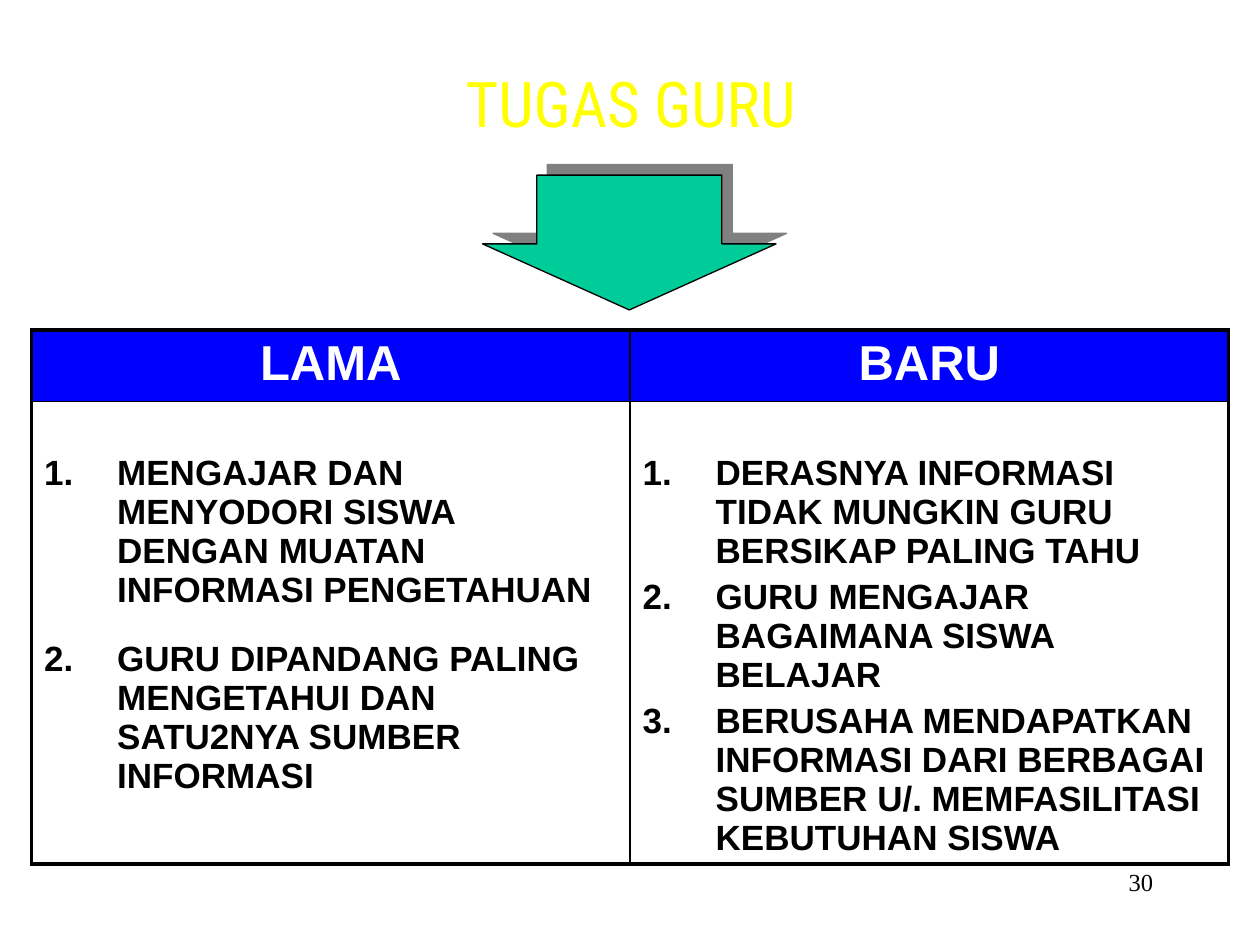
from dataclasses import dataclass

from lxml.etree import SubElement
from pptx import Presentation
from pptx.dml.color import RGBColor
from pptx.enum.shapes import MSO_SHAPE
from pptx.enum.text import MSO_ANCHOR, PP_ALIGN
from pptx.oxml.ns import qn
from pptx.util import Inches, Pt

BLACK = "000000"
THIN, THICK = 1, 2.25


@dataclass
class Column:
    head: str
    items: list[str]
    gap: float
    right: float
    bottom: float


COLUMNS = [
    Column("LAMA", [
        "MENGAJAR DAN MENYODORI SISWA DENGAN MUATAN INFORMASI PENGETAHUAN",
        "GURU DIPANDANG PALING MENGETAHUI DAN SATU2NYA SUMBER INFORMASI",
    ], 17, 0.2, 0.54),
    Column("BARU", [
        "DERASNYA INFORMASI TIDAK MUNGKIN GURU BERSIKAP PALING TAHU",
        "GURU MENGAJAR BAGAIMANA SISWA BELAJAR",
        "BERUSAHA MENDAPATKAN INFORMASI DARI BERBAGAI SUMBER U/. "
        "MEMFASILITASI KEBUTUHAN SISWA",
    ], 4, 0.1, 0.05),
]


def paint(target, color: str) -> None:
    target.rgb = RGBColor.from_string(color)


def style(para, face: str, size: float, color: str, bold: bool = False) -> None:
    font = para.font
    font.name, font.size, font.bold = face, Pt(size), bold
    font.fill.solid()
    paint(font.fill.fore_color, color)


def place(shape, left: float, top: float, width: float, height: float) -> None:
    shape.left, shape.top = Inches(left), Inches(top)
    shape.width, shape.height = Inches(width), Inches(height)


def add_title(slide, text: str) -> None:
    title = slide.shapes.title
    place(title, 2.92, 0.5, 4.17, 0.62)
    frame = title.text_frame
    frame.text = text
    frame.word_wrap = False
    frame.vertical_anchor = MSO_ANCHOR.MIDDLE
    para = frame.paragraphs[0]
    para.alignment = PP_ALIGN.CENTER
    style(para, "Roboto Condensed", 36, "FFFF00")


def add_number(slide, text: str) -> None:
    box = slide.shapes.add_textbox(Inches(7.17), Inches(6.83), Inches(2.08), Inches(0.5))
    frame = box.text_frame
    frame.word_wrap = True
    frame.text = text
    para = frame.paragraphs[0]
    para.alignment = PP_ALIGN.RIGHT
    style(para, "Times New Roman", 14, BLACK)


def add_arrow(slide) -> None:
    arrow = slide.shapes.add_shape(
        MSO_SHAPE.DOWN_ARROW, Inches(3.83), Inches(1.39), Inches(2.33), Inches(1.07))
    arrow.adjustments[0], arrow.adjustments[1] = 0.63, 0.49
    arrow.fill.solid()
    paint(arrow.fill.fore_color, "00CC99")
    arrow.line.width = Pt(0.75)
    paint(arrow.line.color, BLACK)
    arrow.shadow.inherit = False
    effects = arrow.element.spPr.find(qn("a:effectLst"))
    shadow = SubElement(effects, qn("a:outerShdw"), dist=str(Pt(8.5)),
                        dir=str(315 * 60000), algn="ctr", rotWithShape="0")
    SubElement(shadow, qn("a:srgbClr"), val="808080")


def frame_cell(cell, row: int, col: int) -> None:
    props = cell._tc.get_or_add_tcPr()
    outer = {"lnL": col == 0, "lnR": col == 1, "lnT": row == 0, "lnB": row == 1}
    for tag, edge in outer.items():
        line = SubElement(props, qn(f"a:{tag}"), w=str(Pt(THICK if edge else THIN)))
        fill = SubElement(line, qn("a:solidFill"))
        SubElement(fill, qn("a:srgbClr"), val=BLACK)


def fill_head(cell, text: str) -> None:
    cell.fill.solid()
    paint(cell.fill.fore_color, "0000FF")
    cell.text = text
    para = cell.text_frame.paragraphs[0]
    para.alignment = PP_ALIGN.CENTER
    style(para, "Arial", 28, "FFFFFF", True)


def fill_list(cell, column: Column) -> None:
    cell.fill.background()
    cell.vertical_anchor = MSO_ANCHOR.BOTTOM
    cell.margin_right = Inches(column.right)
    cell.margin_bottom = Inches(column.bottom)
    cell.text = "\n".join(column.items)
    for i, para in enumerate(cell.text_frame.paragraphs):
        style(para, "Arial", 20, BLACK, True)
        if i:
            para.space_before = Pt(column.gap)
        props = para._p.get_or_add_pPr()
        props.set("marL", str(Inches(0.58)))
        props.set("indent", str(-Inches(0.58)))
        bullet = props.makeelement(qn("a:buAutoNum"), {"type": "arabicPeriod"})
        props.find(qn("a:defRPr")).addprevious(bullet)


def add_grid(slide, columns: list[Column]) -> None:
    heights = [0.55, 3.67]
    table = slide.shapes.add_table(
        2, len(columns), Inches(0.25), Inches(2.62), Inches(9.5), Inches(sum(heights))).table
    table.first_row = table.horz_banding = False
    for row, height in zip(table.rows, heights):
        row.height = Inches(height)
    for col, column in enumerate(columns):
        head, body = table.cell(0, col), table.cell(1, col)
        for row, cell in enumerate((head, body)):
            frame_cell(cell, row, col)
        fill_head(head, column.head)
        fill_list(body, column)


def main() -> None:
    deck = Presentation()
    deck.slide_width, deck.slide_height = Inches(10), Inches(7.5)
    slide = deck.slides.add_slide(deck.slide_layouts[5])
    add_title(slide, "TUGAS GURU")
    add_number(slide, "30")
    add_grid(slide, COLUMNS)
    add_arrow(slide)
    deck.save("out.pptx")


if __name__ == "__main__":
    main()
